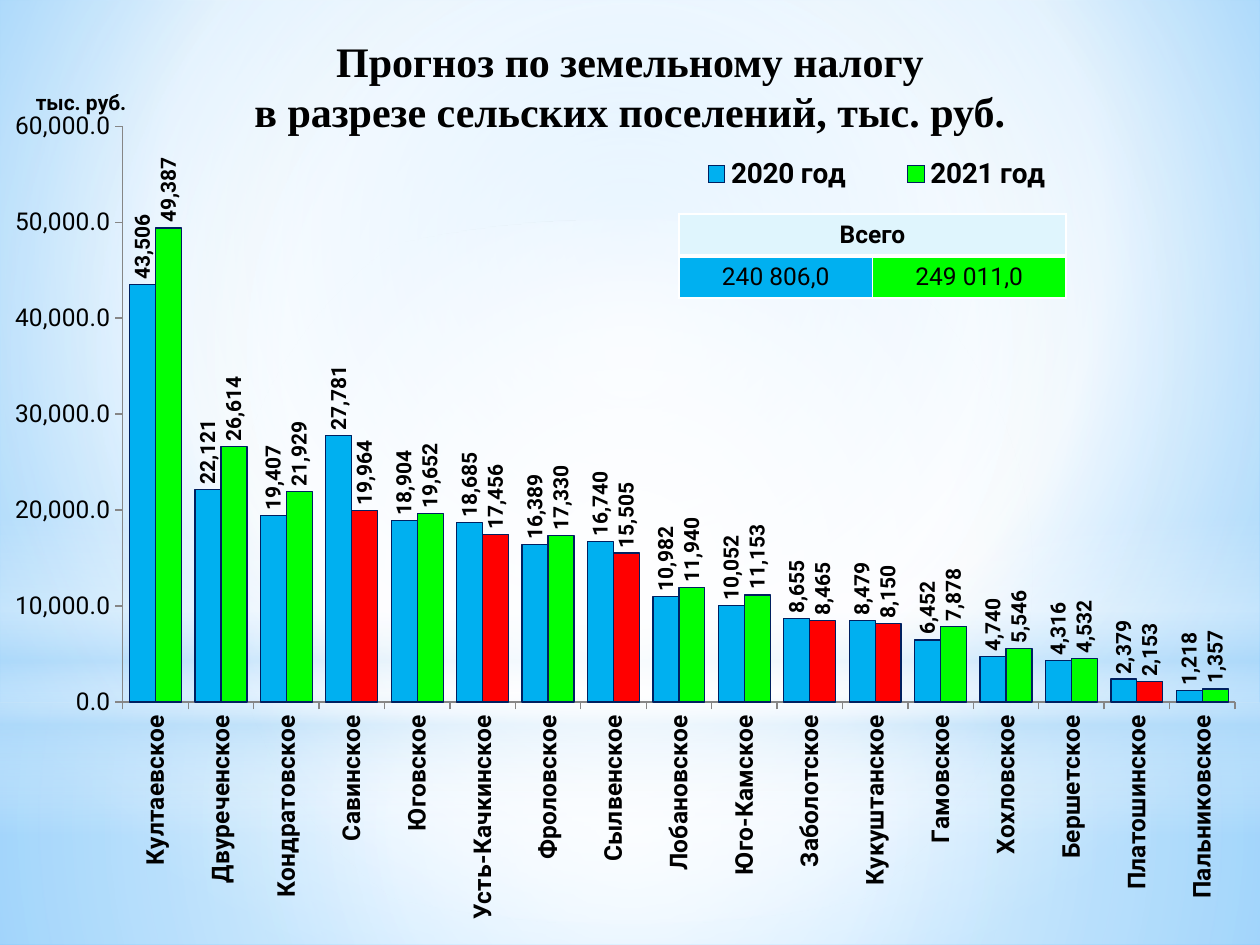
from lxml import etree
from pptx import Presentation
from pptx import util as u
from pptx.chart.data import CategoryChartData
from pptx.dml.color import RGBColor
from pptx.enum import chart as ch, shapes, text
from pptx.oxml import ns, parse_xml

PX = 914400 / 126  # EMU per px
BLACK = RGBColor(0, 0, 0)
WHITE = RGBColor(0xFF, 0xFF, 0xFF)
GREY = RGBColor(0x86, 0x86, 0x86)
NAVY = RGBColor(0x00, 0x20, 0x60)
BLUE = RGBColor(0x00, 0xB0, 0xF0)
GREEN = RGBColor(0x00, 0xFF, 0x00)
RED = RGBColor(0xFF, 0x00, 0x00)
PALE = RGBColor(0xDF, 0xF5, 0xFD)
SKY = RGBColor(0xB4, 0xDC, 0xFA)
BG_EDGE = RGBColor(0x5B, 0xB9, 0xFF)
BG_CORE = RGBColor(0x9E, 0xD5, 0xFF)
SANS, SERIF = "Roboto", "Times New Roman"
CENTRE = (50, 50, 50, 50)

# settlement, 2020, 2021
TAXES = [
    ("Култаевское", 43506, 49387), ("Двуреченское", 22121, 26614),
    ("Кондратовское", 19407, 21929), ("Савинское", 27781, 19964),
    ("Юговское", 18904, 19652), ("Усть-Качкинское", 18685, 17456),
    ("Фроловское", 16389, 17330), ("Сылвенское", 16740, 15505),
    ("Лобановское", 10982, 11940), ("Юго-Камское", 10052, 11153),
    ("Заболотское", 8655, 8465), ("Кукуштанское", 8479, 8150),
    ("Гамовское", 6452, 7878), ("Хохловское", 4740, 5546),
    ("Бершетское", 4316, 4532), ("Платошинское", 2379, 2153),
    ("Пальниковское", 1218, 1357),
]


def px(n):
    return u.Emu(round(n * PX))


def emu(box):
    return [px(n) for n in box]


def set_font(font, size, bold=False, name=SANS):
    font.size, font.bold, font.name = u.Pt(size), bold, name
    font.color.rgb = BLACK


def set_gradient(fill, element, stops, focus=None):
    """Stops are (position %, colour, opacity %); no focus means top to bottom."""
    fill.solid()
    gs = "".join(
        f'<a:gs pos="{pos * 1000}"><a:srgbClr val="{colour}">'
        f'<a:alpha val="{opacity * 1000}"/></a:srgbClr></a:gs>'
        for pos, colour, opacity in stops)
    if focus:
        sides = " ".join(f'{k}="{v * 1000}"' for k, v in zip("ltrb", focus))
        way = f'<a:path path="circle"><a:fillToRect {sides}/></a:path>'
    else:
        way = '<a:lin ang="5400000" scaled="0"/>'
    grad = parse_xml(f'<a:gradFill {ns.nsdecls("a")} rotWithShape="1">'
                     f'<a:gsLst>{gs}</a:gsLst>{way}</a:gradFill>')
    solid = element.find(".//" + ns.qn("a:solidFill"))
    solid.getparent().replace(solid, grad)


def add_backdrop(s):
    set_gradient(s.background.fill, s.element,
                 [(0, BG_CORE, 100), (60, WHITE, 100), (100, BG_EDGE, 100)],
                 (20, 10, 20, 60))
    rect, oval = shapes.MSO_SHAPE.RECTANGLE, shapes.MSO_SHAPE.OVAL
    layers = [
        (rect, (0, 703, 1260, 242),
         [(0, WHITE, 91), (37, WHITE, 76), (100, SKY, 79)], CENTRE),
        (rect, (0, 0, 1260, 703),
         [(0, WHITE, 89), (48, WHITE, 62), (100, SKY, 79)], CENTRE),
        (rect, (0, 519, 1260, 315),
         [(0, WHITE, 0), (29, WHITE, 30), (45, SKY, 40), (55, WHITE, 26),
          (65, SKY, 60), (100, WHITE, 0)], None),
        (oval, (0, 220, 1260, 703), [(0, WHITE, 100), (56, WHITE, 0)], CENTRE),
    ]
    for kind, box, stops, focus in layers:
        sp = s.shapes.add_shape(kind, *emu(box))
        sp.shadow.inherit = False
        sp.line.fill.background()
        set_gradient(sp.fill, sp.element, stops, focus)


def add_title(s, box):
    tf = s.shapes.add_textbox(*emu(box)).text_frame
    tf.word_wrap = True
    p = tf.paragraphs[0]
    p.text = "Прогноз по земельному налогу\vв разрезе сельских поселений, тыс. руб."
    p.alignment = text.PP_ALIGN.CENTER
    set_font(p.font, 24, True, SERIF)


def set_layout(parent, index, inner=False, **sizes):
    """Place a chart part by fractions of the chart."""
    for old in parent.findall(ns.qn("c:layout")):
        parent.remove(old)
    layout = etree.Element(ns.qn("c:layout"))
    manual = etree.SubElement(layout, ns.qn("c:manualLayout"))
    values = {"layoutTarget": "inner"} if inner else {}
    values.update(xMode="edge", yMode="edge", **sizes)
    for tag, value in values.items():
        etree.SubElement(manual, ns.qn("c:" + tag)).set("val", str(value))
    parent.insert(index, layout)


def turn_upright(element):
    body = element.find(ns.qn("c:txPr")).find(ns.qn("a:bodyPr"))
    body.set("rot", "-5400000")
    body.set("vert", "horz")


def paint_bar(fmt, colour):
    fmt.fill.solid()
    fmt.fill.fore_color.rgb = colour
    fmt.line.color.rgb = NAVY
    fmt.line.width = u.Pt(0.75)


def add_tax_chart(s, box):
    names, *years = zip(*TAXES)
    data = CategoryChartData()
    data.categories = names
    for name, values in zip(("2020 год", "2021 год"), years):
        data.add_series(name, values)
    chart = s.shapes.add_chart(
        ch.XL_CHART_TYPE.COLUMN_CLUSTERED, *emu(box), data).chart
    set_font(chart.font, 18)
    chart.has_title = False
    plot = chart.plots[0]
    plot.gap_width, plot.overlap, plot.vary_by_categories = 52, 0, False
    set_layout(chart.element.find(".//" + ns.qn("c:plotArea")), 0, True,
               x=0.086, y=0.059, w=0.906, h=0.675)

    # Bars and labels; a fall in 2021 is red
    for series, colour in zip(plot.series, (BLUE, GREEN)):
        paint_bar(series.format, colour)
        series.invert_if_negative = False
        labels = series.data_labels
        labels.show_value = True
        labels.number_format, labels.number_format_is_linked = "#,##0", False
        labels.position = ch.XL_LABEL_POSITION.OUTSIDE_END
        set_font(labels.font, 12, True)
        turn_upright(labels._element)
    for i, (_, before, after) in enumerate(TAXES):
        if after < before:
            paint_bar(plot.series[1].points[i].format, RED)

    # Axes
    cat, val = chart.category_axis, chart.value_axis
    for axis, bold in ((cat, True), (val, False)):
        axis.has_major_gridlines = False
        axis.major_tick_mark = ch.XL_TICK_MARK.OUTSIDE
        axis.format.line.color.rgb = GREY
        set_font(axis.tick_labels.font, 14, bold)
    turn_upright(cat._element)
    val.minimum_scale, val.maximum_scale, val.major_unit = 0, 60000, 10000
    val.tick_labels.number_format = "#,##0.0"
    val.tick_labels.number_format_is_linked = False
    tf = val.axis_title.text_frame
    tf.text = "тыс. руб."
    set_font(tf.paragraphs[0].font, 12, True)
    body = tf._txBody.find(ns.qn("a:bodyPr"))
    body.set("rot", "0")
    body.set("vert", "horz")
    set_layout(val.axis_title._element, 1, x=0.012, y=0.01)

    # Legend
    chart.has_legend = True
    chart.legend.position = ch.XL_LEGEND_POSITION.BOTTOM
    chart.legend.include_in_layout = False
    set_font(chart.legend.font, 16, True)
    set_layout(chart.legend._element, 1, x=0.52, y=0.09, w=0.36, h=0.05)


def set_borders(cell, **widths):
    tcPr = cell._tc.get_or_add_tcPr()
    for i, side in enumerate("LRTB"):
        width = u.Pt(widths.get(side, 1))
        tcPr.insert(i, parse_xml(
            f'<a:ln{side} {ns.nsdecls("a")} w="{width}"><a:solidFill>'
            f'<a:srgbClr val="{WHITE}"/></a:solidFill></a:ln{side}>'))


def add_totals(s, box):
    table = s.shapes.add_table(2, 2, *emu(box)).table
    table.cell(0, 0).merge(table.cell(0, 1))
    cells = [(0, 0, "Всего", PALE), (1, 0, "240 806,0", BLUE),
             (1, 1, "249 011,0", GREEN)]
    for row, col, words, colour in cells:
        cell = table.cell(row, col)
        cell.fill.solid()
        cell.fill.fore_color.rgb = colour
        cell.vertical_anchor = text.MSO_ANCHOR.MIDDLE
        p = cell.text_frame.paragraphs[0]
        p.text, p.alignment = words, text.PP_ALIGN.CENTER
        set_font(p.font, 14, row == 0)
        set_borders(cell, **({"B": 3} if row == 0 else {"T": 3}))


def main():
    prs = Presentation()
    prs.slide_width, prs.slide_height = px(1260), px(945)
    s = prs.slides.add_slide(prs.slide_layouts[6])
    add_backdrop(s)
    add_title(s, (25, 29, 1210, 79))
    add_tax_chart(s, (15, 76, 1230, 853))
    add_totals(s, (679, 214, 387, 84))
    prs.save("out.pptx")


if __name__ == "__main__":
    main()
